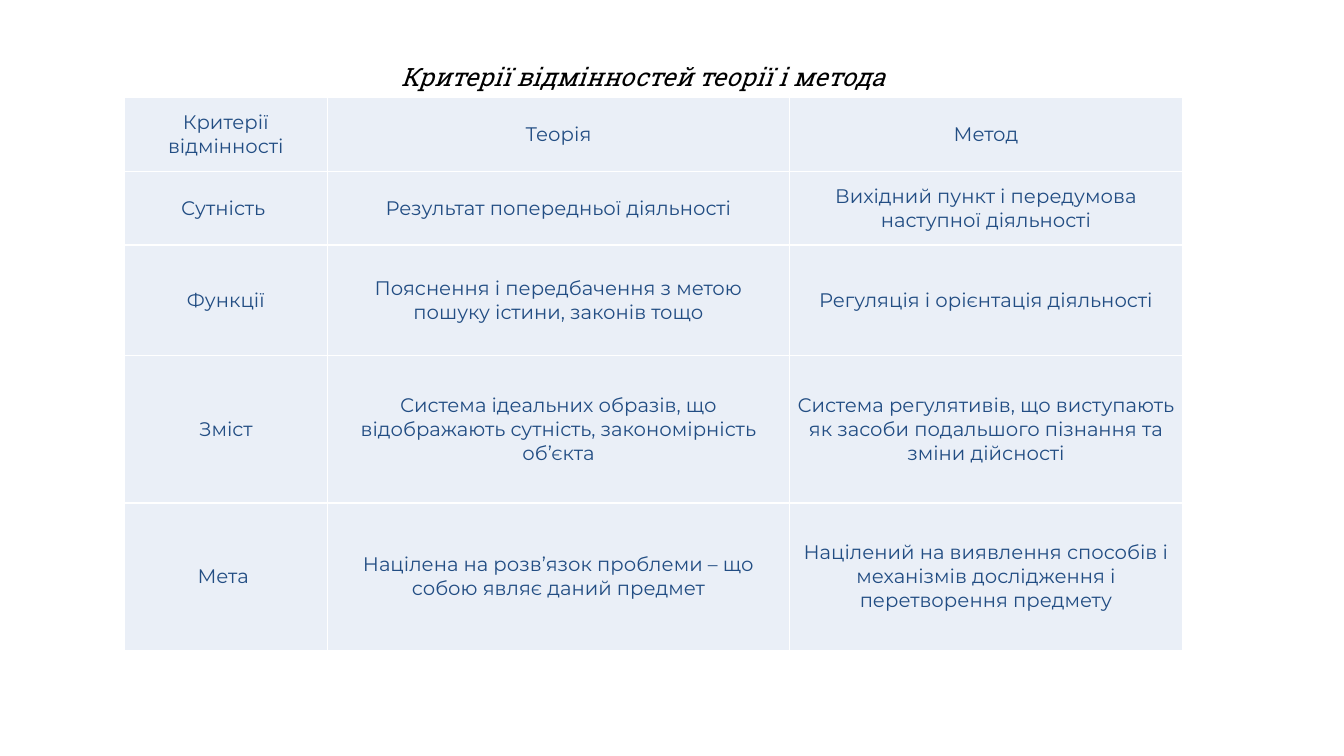
from lxml import etree
from pptx import Presentation
from pptx.dml.color import RGBColor
from pptx.enum.text import MSO_ANCHOR, MSO_AUTO_SIZE, PP_ALIGN
from pptx.oxml.ns import qn
from pptx.util import Inches, Pt

LEFT, CENTER = PP_ALIGN.LEFT, PP_ALIGN.CENTER
MIDDLE = MSO_ANCHOR.MIDDLE
GROW = MSO_AUTO_SIZE.SHAPE_TO_FIT_TEXT

COLORS = {"title": "000000", "text": "224D83", "cell": "EAEFF7", "border": "FFFFFF"}

COL_WIDTHS = [2.02, 4.58, 3.9]
ROW_HEIGHTS = [0.73, 0.73, 1.1, 1.46, 1.46]
CRITERIA = [
    ["Критерії відмінності", "Теорія", "Метод"],
    ["Сутність ", "Результат попередньої діяльності",
     "Вихідний пункт і передумова наступної діяльності"],
    ["Функції", "Пояснення і передбачення з метою пошуку істини, законів тощо",
     "Регуляція і орієнтація діяльності"],
    ["Зміст", "Система ідеальних образів, що відображають сутність, закономірність об’єкта",
     "Система регулятивів, що виступають як засоби подальшого пізнання та зміни дійсності"],
    ["Мета ", "Націлена на розв’язок проблеми – що собою являє даний предмет",
     "Націлений на виявлення способів і механізмів дослідження і перетворення предмету"],
]


def write(tf, text, font="Montserrat", size=14, color="text", italic=False, align=CENTER):
    p = tf.paragraphs[0]
    p.alignment = align
    r = p.add_run()
    r.text = text
    r.font.name = font
    r.font.size = Pt(size)
    r.font.italic = italic
    r.font.color.rgb = RGBColor.from_string(COLORS[color])


def add_title(s, text, x, y, w, h):
    tf = s.shapes.add_textbox(Inches(x), Inches(y), Inches(w), Inches(h)).text_frame
    tf.word_wrap = False
    tf.auto_size = GROW
    write(tf, text, font="Roboto Slab", size=18, color="title", italic=True, align=LEFT)


def set_borders(cell, color, width):
    tc_pr = cell._tc.get_or_add_tcPr()
    # Border lines come before the fill in the cell properties
    for i, side in enumerate(("lnL", "lnR", "lnT", "lnB")):
        ln = etree.Element(qn(f"a:{side}"), w=str(Pt(width)))
        fill = etree.SubElement(ln, qn("a:solidFill"))
        etree.SubElement(fill, qn("a:srgbClr"), val=COLORS[color])
        tc_pr.insert(i, ln)


def fill_cell(cell, text):
    cell.margin_left = cell.margin_right = Inches(0.07)
    cell.margin_top = cell.margin_bottom = 0
    cell.vertical_anchor = MIDDLE
    cell.fill.solid()
    cell.fill.fore_color.rgb = RGBColor.from_string(COLORS["cell"])
    set_borders(cell, "border", 1)
    write(cell.text_frame, text)


def add_criteria_table(s, rows, x, y):
    frame = s.shapes.add_table(len(rows), len(COL_WIDTHS), Inches(x), Inches(y),
                               Inches(sum(COL_WIDTHS)), Inches(sum(ROW_HEIGHTS)))
    table = frame.table
    table.first_row = table.horz_banding = False
    for col, width in zip(table.columns, COL_WIDTHS):
        col.width = Inches(width)
    for row, height, texts in zip(table.rows, ROW_HEIGHTS, rows):
        row.height = Inches(height)
        for cell, text in zip(row.cells, texts):
            fill_cell(cell, text)


def main():
    prs = Presentation()
    prs.slide_width, prs.slide_height = Inches(13.33), Inches(7.5)
    s = prs.slides.add_slide(prs.slide_layouts[6])

    # Heading above the comparison table
    add_title(s, "Критерії відмінностей теорії і метода", 3.88, 0.56, 5.2, 0.4)
    add_criteria_table(s, CRITERIA, 1.23, 0.97)

    prs.save("out.pptx")


if __name__ == "__main__":
    main()
